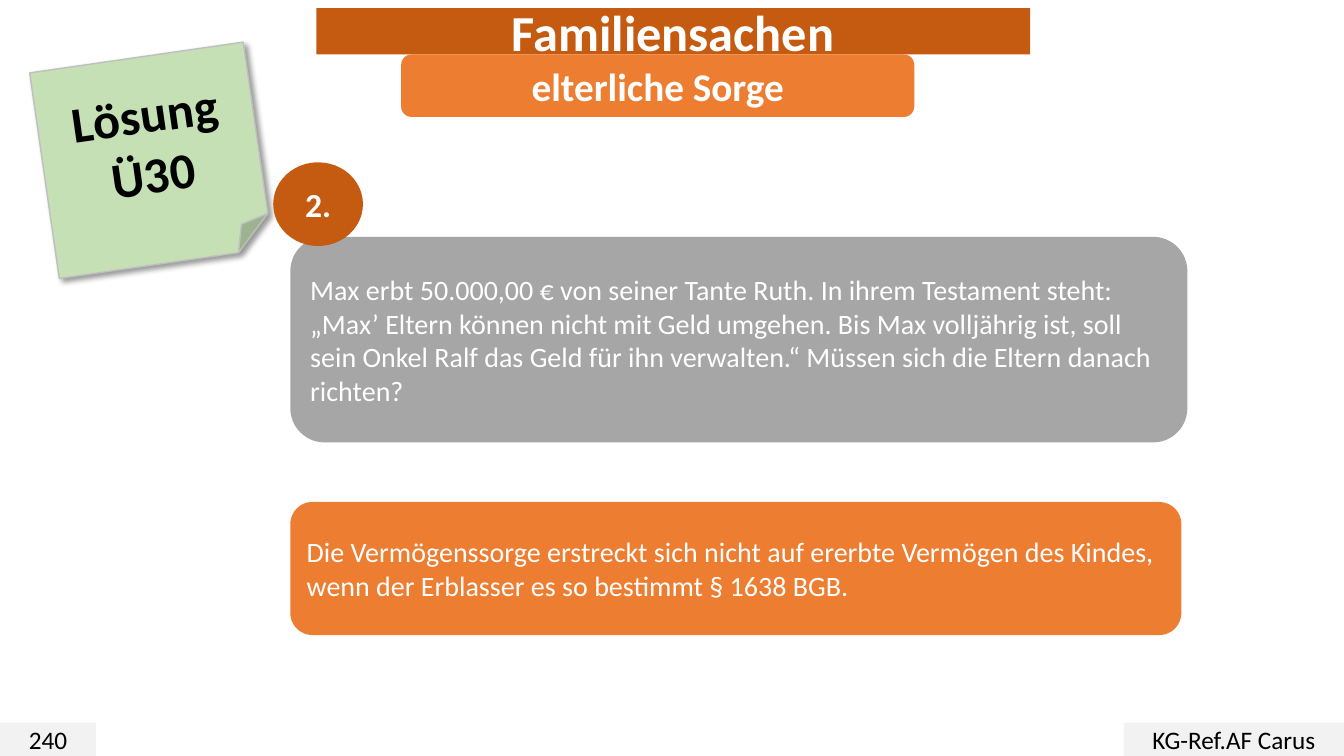
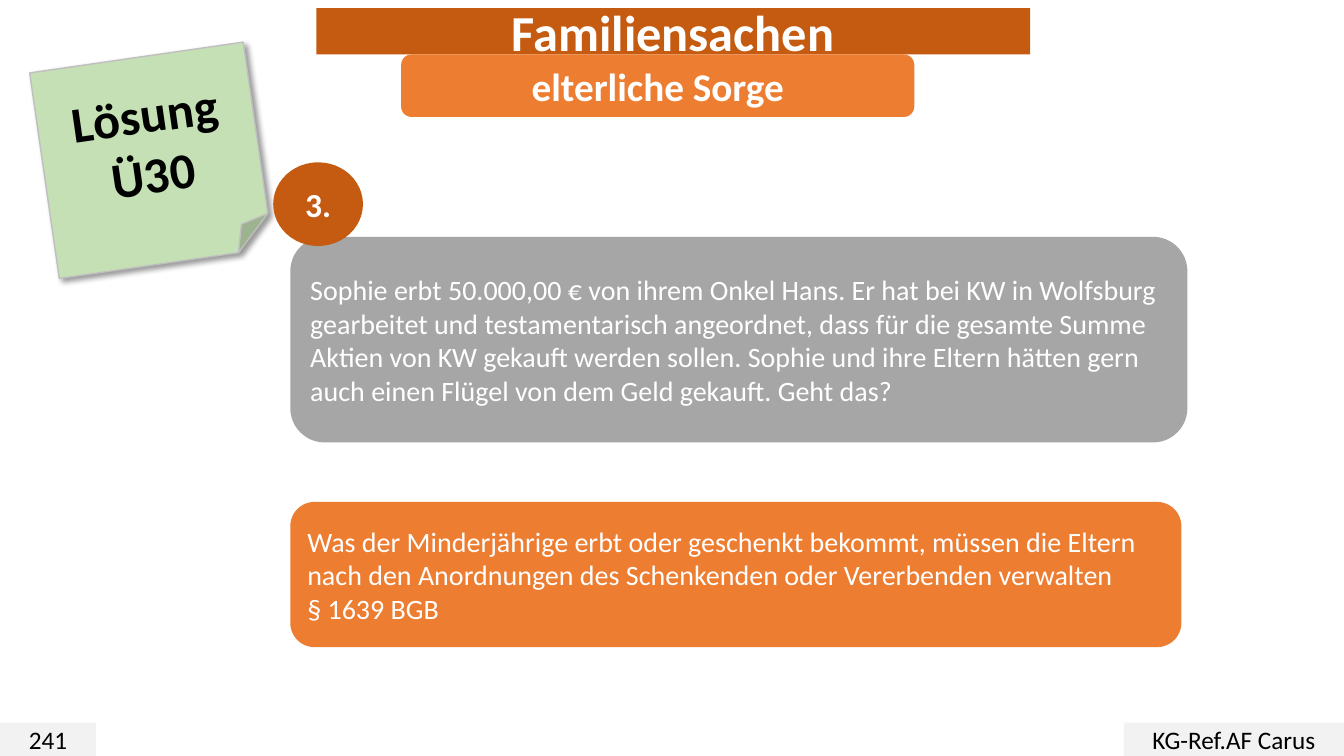
from dataclasses import dataclass

from lxml.etree import SubElement
from pptx import Presentation
from pptx.dml.color import RGBColor
from pptx.enum.shapes import MSO_SHAPE as Preset
from pptx.enum.text import MSO_ANCHOR as Anchor, MSO_AUTO_SIZE as AutoSize, PP_ALIGN as Align
from pptx.oxml import parse_xml
from pptx.oxml.ns import nsdecls, qn
from pptx.util import Inches, Pt


@dataclass(frozen=True)
class Theme:
    font: str = "Calibri"
    dark_orange: str = "C55A11"
    orange: str = "ED7D31"
    gray: str = "A6A6A6"
    footer: str = "F2F2F2"
    note: str = "C5E0B4"
    note_edge: str = "BFBFBF"
    white: str = "FFFFFF"
    black: str = "000000"
    title_size: int = 36
    subtitle_size: int = 28
    badge_size: int = 24
    body_size: int = 20
    footer_size: int = 18


theme = Theme()
presentation = Presentation()
presentation.slide_width = Inches(13.333)
presentation.slide_height = Inches(7.5)
title_only = presentation.slide_layouts[5]

NOTE_SHADOW = (
    f'<a:effectLst {nsdecls("a")}><a:outerShdw blurRad="{Pt(4)}" dist="{Pt(3)}" dir="2700000">'
    f'<a:srgbClr val="{theme.black}"><a:alpha val="40000"/></a:srgbClr></a:outerShdw></a:effectLst>'
)

# Left, top, width and height in percent of the slide
TITLE_BOX = (23.55, 1.07, 53.1, 6.13)
SUBTITLE_BOX = (29.85, 7.2, 38.18, 8.27)
NOTE_BOX = (3.23, 7.47, 16.05, 27.47)
BADGE_BOX = (20.33, 21.47, 6.68, 11.07)
QUESTION_BOX = (21.6, 31.33, 66.75, 27.2)
ANSWER_LEFT, ANSWER_TOP, ANSWER_WIDTH = 21.6, 66.4, 66.3
PAGE_BOX = (0, 95.6, 7.13, 4.4)
AUTHOR_BOX = (83.63, 95.6, 16.37, 4.4)

# Page number, badge, question, answer paragraphs, answer height
exercises = [
    (240, "2.",
     "Max erbt 50.000,00 € von seiner Tante Ruth. In ihrem Testament steht: "
     "„Max’ Eltern können nicht mit Geld umgehen. Bis Max volljährig ist, soll "
     "sein Onkel Ralf das Geld für ihn verwalten.“ Müssen sich die Eltern danach richten?",
     "Die Vermögenssorge erstreckt sich nicht auf ererbte Vermögen des Kindes, "
     "wenn der Erblasser es so bestimmt § 1638 BGB.", 17.6),
    (241, "3.",
     "Sophie erbt 50.000,00 € von ihrem Onkel Hans. Er hat bei KW in Wolfsburg "
     "gearbeitet und testamentarisch angeordnet, dass für die gesamte Summe "
     "Aktien von KW gekauft werden sollen. Sophie und ihre Eltern hätten gern "
     "auch einen Flügel von dem Geld gekauft. Geht das?",
     "Was der Minderjährige erbt oder geschenkt bekommt, müssen die Eltern "
     "nach den Anordnungen des Schenkenden oder Vererbenden verwalten\n§ 1639 BGB", 19.2),
]


def style_box(shape, box, text, fill, size, color=theme.white, bold=False, align=Align.CENTER):
    """Place, fill and label a title placeholder or a shape."""
    left, top, width, height = box
    shape.left = int(presentation.slide_width * left / 100)
    shape.top = int(presentation.slide_height * top / 100)
    shape.width = int(presentation.slide_width * width / 100)
    shape.height = int(presentation.slide_height * height / 100)
    shape.fill.solid()
    shape.fill.fore_color.rgb = RGBColor.from_string(fill)
    shape.line.fill.background()
    frame = shape.text_frame
    frame.text = text
    frame.word_wrap = True
    frame.auto_size = AutoSize.NONE
    frame.vertical_anchor = Anchor.MIDDLE
    for paragraph in frame.paragraphs:
        paragraph.alignment = align
        paragraph.line_spacing = 1.0
        paragraph.font.name = theme.font
        paragraph.font.size = Pt(size)
        paragraph.font.bold = bold
        paragraph.font.color.rgb = RGBColor.from_string(color)


def add_box(slide, preset, *style, **options):
    """Add a shadowless preset shape in the given style."""
    shape = slide.shapes.add_shape(preset, 0, 0, 0, 0)
    shape.shadow.inherit = False
    style_box(shape, *style, **options)
    return shape


for page, number, question, answer, answer_height in exercises:
    slide = presentation.slides.add_slide(title_only)

    # Title band with rounded corners
    title = slide.shapes.title
    style_box(title, TITLE_BOX, "Familiensachen", theme.dark_orange, theme.title_size, bold=True)
    outline = parse_xml(f'<a:prstGeom {nsdecls("a")} prst="roundRect"/>')
    SubElement(outline, qn("a:avLst"))
    title.element.spPr.find(qn("a:xfrm")).addnext(outline)

    # Footer
    for box, text in ((PAGE_BOX, str(page)), (AUTHOR_BOX, "KG-Ref.AF Carus")):
        add_box(slide, Preset.RECTANGLE, box, text, theme.footer, theme.footer_size,
                color=theme.black)

    # Sticky note
    note = add_box(slide, Preset.FOLDED_CORNER, NOTE_BOX, "Lösung\nÜ30", theme.note,
                   theme.title_size, color=theme.black, bold=True)
    note.rotation = 351.8
    note.line.color.rgb = RGBColor.from_string(theme.note_edge)
    note.line.width = Pt(1)
    properties = note.element.spPr
    properties.replace(properties.find(qn("a:effectLst")), parse_xml(NOTE_SHADOW))

    # Question with its number, then the answer
    add_box(slide, Preset.ROUNDED_RECTANGLE, QUESTION_BOX, question, theme.gray,
            theme.body_size, align=Align.LEFT)
    add_box(slide, Preset.FLOWCHART_CONNECTOR, BADGE_BOX, number, theme.dark_orange,
            theme.badge_size, bold=True)
    answer_box = (ANSWER_LEFT, ANSWER_TOP, ANSWER_WIDTH, answer_height)
    add_box(slide, Preset.ROUNDED_RECTANGLE, answer_box, answer, theme.orange,
            theme.body_size, align=Align.LEFT)

    # Subtitle band
    add_box(slide, Preset.ROUNDED_RECTANGLE, SUBTITLE_BOX, "elterliche Sorge", theme.orange,
            theme.subtitle_size, bold=True)

presentation.save("out.pptx")
